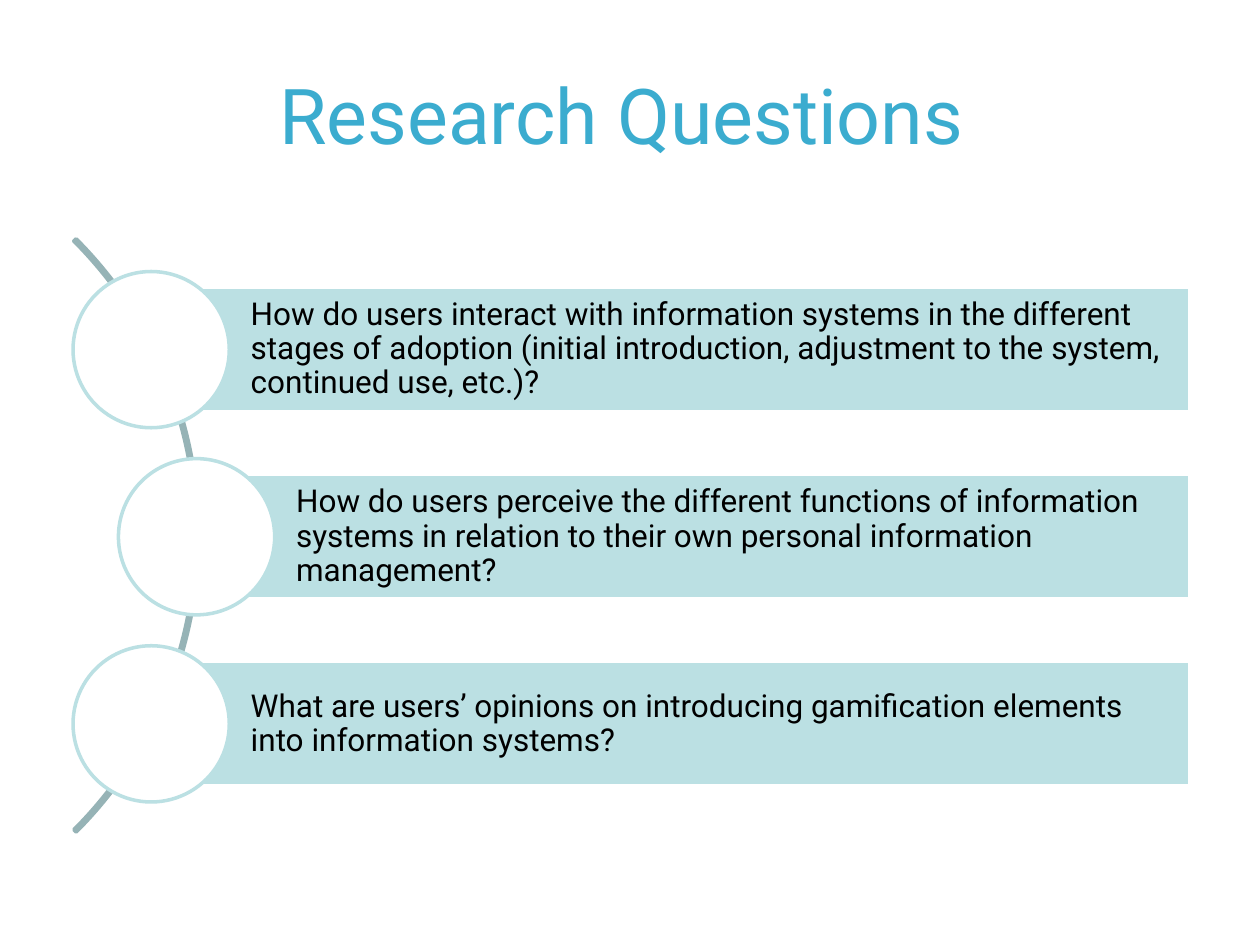
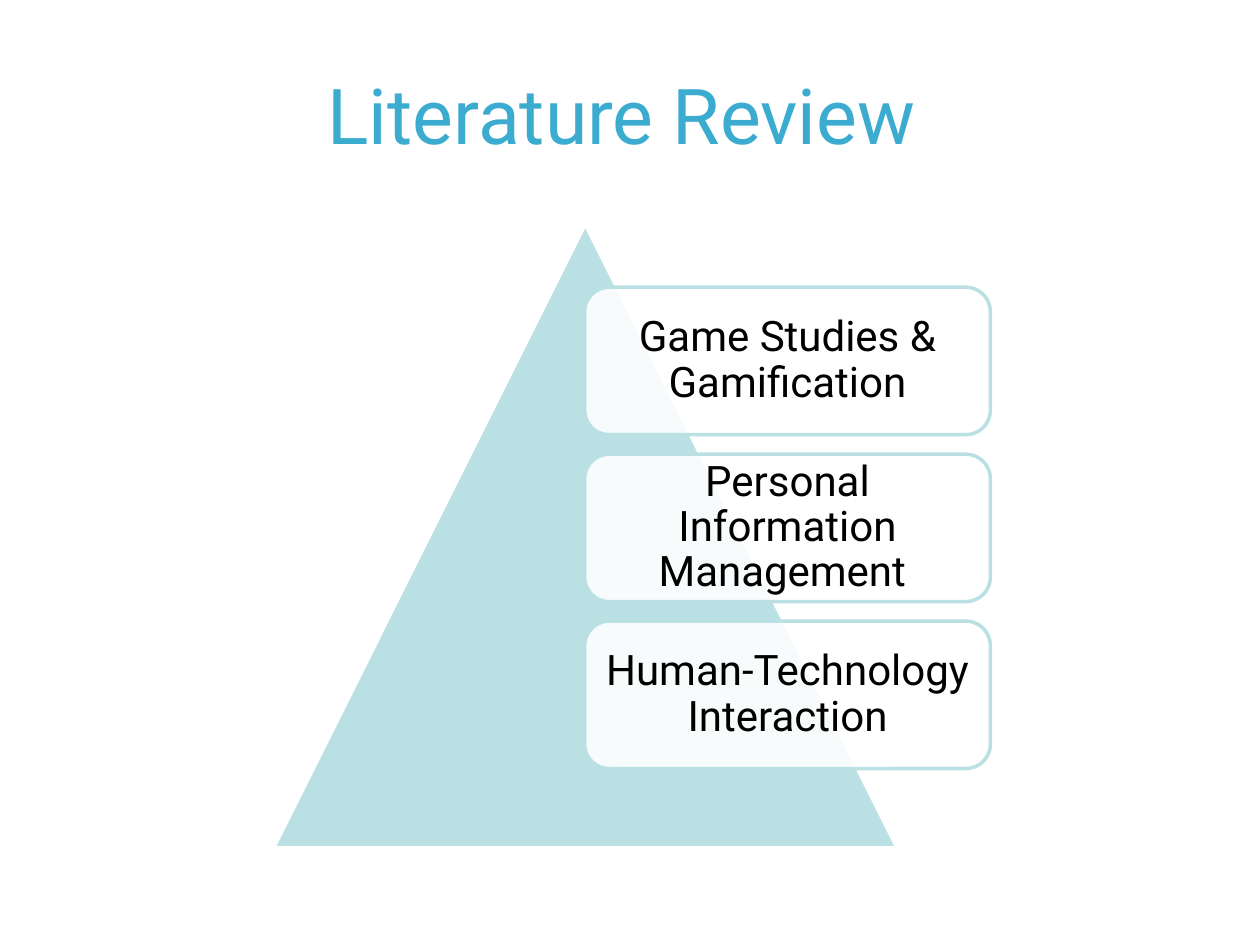
"""Build the research questions and literature review slides."""
from lxml import etree
from pptx import Presentation
from pptx.dml.color import RGBColor
from pptx.enum import shapes, text
from pptx.oxml.ns import qn
from pptx.util import Inches, Pt

COLORS = {"title": "3BACCF", "pale": "BBE0E3", "arc": "96B3B6", "white": "FFFFFF", "black": "000000"}
FONT = "Roboto"
SHAPE = shapes.MSO_SHAPE


def add_shape(page, kind, left, top, width, height, fill, line):
    shape = page.shapes.add_shape(kind, Inches(left), Inches(top), Inches(width), Inches(height))
    shape.shadow.inherit = False
    if fill:
        shape.fill.solid()
        shape.fill.fore_color.rgb = RGBColor.from_string(COLORS[fill])
    else:
        shape.fill.background()
    shape.line.color.rgb = RGBColor.from_string(COLORS[line])
    shape.line.width = Pt(2)
    return shape


def write(box, words, size=18, color="black", align=text.PP_ALIGN.LEFT, spacing=0.9, insets=(0.1, 0.05, 0.1, 0.05)):
    frame = box.text_frame
    frame.word_wrap = True
    frame.vertical_anchor = text.MSO_ANCHOR.MIDDLE
    frame.margin_left, frame.margin_top, frame.margin_right, frame.margin_bottom = map(Inches, insets)
    para = frame.paragraphs[0]
    para.alignment = align
    para.line_spacing = spacing
    span = para.add_run()
    span.text = words
    span.font.name = FONT
    span.font.size = Pt(size)
    span.font.color.rgb = RGBColor.from_string(COLORS[color])


deck = Presentation()
deck.slide_width, deck.slide_height = Inches(10), Inches(7.5)

pages = []
for title in ["Research Questions ", "Literature Review "]:
    page = deck.slides.add_slide(deck.slide_layouts[6])
    box = page.shapes.add_textbox(Inches(0.51), Inches(0.28), Inches(9), Inches(1.25))
    write(box, title, size=44, color="title", align=text.PP_ALIGN.CENTER, spacing=1.0)
    pages.append(page)
questions_page, review_page = pages

arc = add_shape(questions_page, SHAPE.BLOCK_ARC, -5.08, 0.92, 6.66, 6.66, None, "arc")
for index, value in enumerate([189, 27, 0.004]):
    arc.adjustments[index] = value

questions = [
    (1.2, "How do users interact with information systems in the different stages of adoption "
          "(initial introduction, adjustment to the system, continued use, etc.)?"),
    (1.56, "How do users perceive the different functions of information systems "
           "in relation to their own personal information management?"),
    (1.2, "What are users’ opinions on introducing gamification elements into information systems?"),
]
bar_right, bar_height, circle_size = 9.44, 0.99, 1.24
for row, (left, question) in enumerate(questions):
    top = 2.28 + row * 1.485
    bar = add_shape(questions_page, SHAPE.RECTANGLE, left, top, bar_right - left, bar_height, "pale", "white")
    write(bar, question, insets=(0.79, 0.05, 0.05, 0.05))
    add_shape(questions_page, SHAPE.OVAL, left - circle_size / 2, top + (bar_height - circle_size) / 2,
              circle_size, circle_size, "white", "pale")

add_shape(review_page, SHAPE.ISOSCELES_TRIANGLE, 2.17, 1.78, 4.95, 4.95, "pale", "white")
topics = ["Game Studies & Gamification", "Personal Information Management ", "Human-Technology Interaction"]
for row, topic in enumerate(topics):
    card = add_shape(review_page, SHAPE.ROUNDED_RECTANGLE, 4.64, 2.28 + row * 1.325, 3.22, 1.17, "white", "pale")
    fill_color = card.fill._xPr.find(qn("a:solidFill"))[0]
    etree.SubElement(fill_color, qn("a:alpha"), val="90000")
    write(card, topic, size=24, align=text.PP_ALIGN.CENTER, insets=(0.1, 0.1, 0.1, 0.1))

deck.save("out.pptx")
